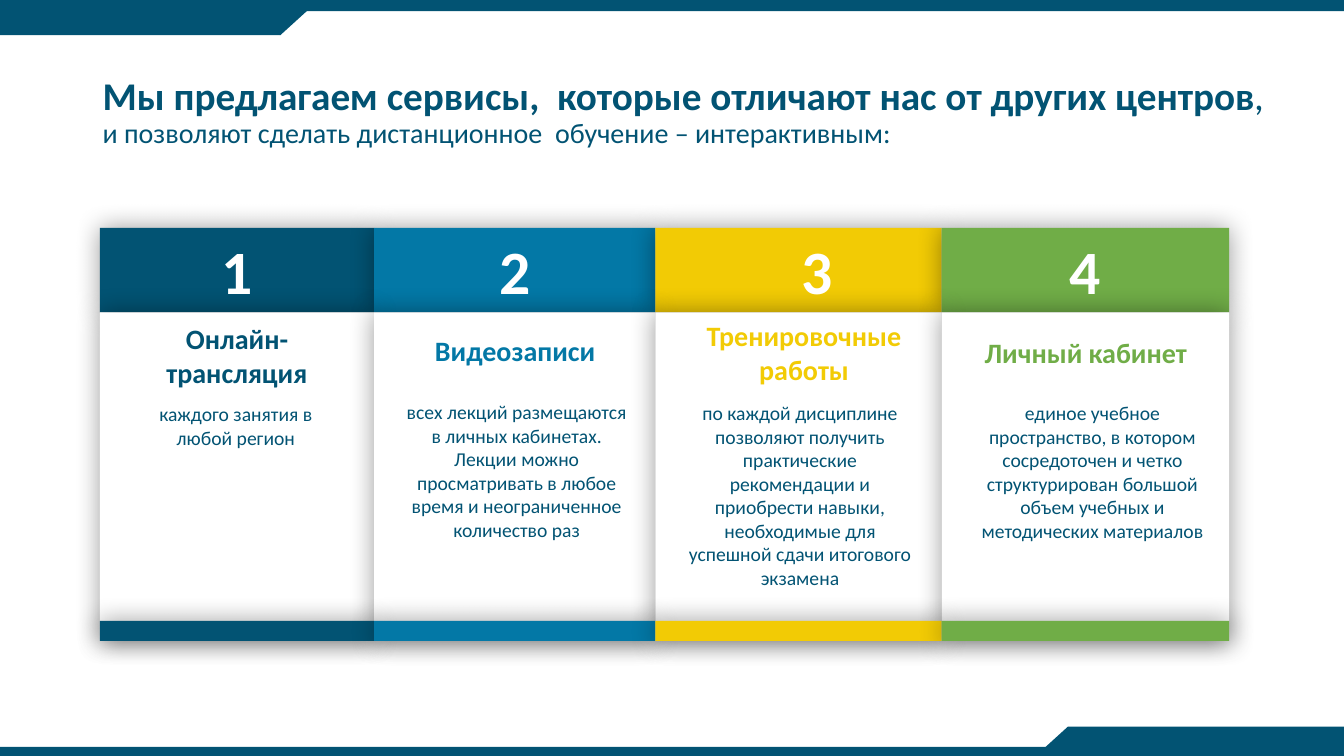
import pptx
import pptx.util
import pptx.oxml
import pptx.oxml.ns
import pptx.dml.color
import pptx.enum.shapes
import pptx.enum.text
from collections import namedtuple

Inches = pptx.util.Inches
Shape = pptx.enum.shapes.MSO_SHAPE
Align = pptx.enum.text.PP_ALIGN
Anchor = pptx.enum.text.MSO_ANCHOR

WIDTH, HEIGHT = 13.33, 7.5
NAVY, WHITE = "025373", "FFFFFF"
SHADOW = (
    '<a:effectLst %s><a:outerShdw blurRad="241300" dist="0" dir="0" algn="ctr" rotWithShape="0">'
    '<a:srgbClr val="000000"><a:alpha val="40000"/></a:srgbClr></a:outerShdw></a:effectLst>'
    % pptx.oxml.ns.nsdecls("a")
)

# mid: centre of the number; head and body: left, top, width of the text
Card = namedtuple("Card", "left width color mid title head text body")
CARDS = [
    Card(0.99, 2.72, NAVY, 2.35, "Онлайн-трансляция", (1.29, 3.14, 2.12),
         "каждого занятия в любой регион", (1.28, 3.94, 2.12)),
    Card(3.71, 2.79, "0378A6", 5.11, "Видеозаписи", (4.05, 3.26, 2.12),
         "всех лекций размещаются в личных кабинетах. Лекции можно просматривать "
         "в любое время и неограниченное количество раз", (3.92, 3.92, 2.41)),
    Card(6.5, 2.84, "F2CB05", 8.1, "Тренировочные работы", (6.84, 3.11, 2.27),
         "по каждой дисциплине позволяют получить практические рекомендации и приобрести "
         "навыки, необходимые для успешной сдачи итогового экзамена", (6.71, 3.93, 2.45)),
    Card(9.34, 2.85, "70AD47", 10.76, "Личный кабинет", (9.59, 3.28, 2.36),
         "единое учебное пространство, в котором сосредоточен и четко структурирован "
         "большой объем учебных и методических материалов", (9.59, 3.93, 2.49)),
]


def rgb(color):
    return pptx.dml.color.RGBColor.from_string(color)


def block(slide, box, color, kind=Shape.RECTANGLE, shade=False):
    shape = slide.shapes.add_shape(kind, *map(Inches, box))
    shape.fill.solid()
    shape.fill.fore_color.rgb = rgb(color)
    shape.line.fill.background()
    if shade:
        shape._element.spPr.append(pptx.oxml.parse_xml(SHADOW))
    else:
        shape.shadow.inherit = False
    return shape


def style(font, size, color, bold=False):
    font.name = "Calibri"
    font.size = pptx.util.Pt(size)
    font.color.rgb = rgb(color)
    font.bold = bold


def label(slide, box, text, size, color, bold=False):
    frame = slide.shapes.add_textbox(*map(Inches, box)).text_frame
    frame.word_wrap = True
    para = frame.paragraphs[0]
    para.text = text
    para.alignment = Align.CENTER
    style(para.font, size, color, bold)


def frame_bars(slide):
    """Bars along the top and bottom edges, each with a slanted tab."""
    for top in (0, HEIGHT - 0.09):
        block(slide, (0, top, WIDTH, 0.11), NAVY)
    for left, top, slant, turn in ((0, 0.05, 2.45, 0), (10.59, 7.21, 10.26, 180)):
        block(slide, (left, top, 2.78, 0.3), NAVY)
        tip = block(slide, (slant, top, 0.66, 0.3), NAVY, Shape.FLOWCHART_MERGE)
        tip.rotation = turn


def heading(slide, box):
    frame = slide.shapes.add_textbox(*map(Inches, box)).text_frame
    frame.word_wrap = True
    frame.vertical_anchor = Anchor.MIDDLE
    first, second = frame.paragraphs[0], frame.add_paragraph()
    lead = "Мы предлагаем сервисы,  которые отличают нас от других центров"
    for text, bold in ((lead, True), (",", False)):
        run = first.add_run()
        run.text = text
        style(run.font, 28, NAVY, bold)
    second.text = "и позволяют сделать дистанционное  обучение – интерактивным:"
    style(second.font, 20, NAVY)
    for para in (first, second):
        para.line_spacing = 0.9


def cards(slide, top, height):
    """Header, panel and footer layers, then the text of every card."""
    head, foot = 0.84, 0.2
    layers = (
        (top, head, None),
        (top + head, height - head, WHITE),
        (top + height - foot, foot, None),
    )
    for y, tall, fill in layers:
        for card in CARDS:
            block(slide, (card.left, y, card.width, tall), fill or card.color, shade=True)
    for number, card in enumerate(CARDS, 1):
        label(slide, (card.mid - 0.26, top, 0.52, head), str(number), 44, WHITE, True)
        tall = 0.77 if number % 2 else 0.44
        label(slide, (*card.head, tall), card.title, 20, card.color, True)
        label(slide, (*card.body, 1.51), card.text, 14, NAVY)


def main():
    deck = pptx.Presentation()
    deck.slide_width, deck.slide_height = Inches(WIDTH), Inches(HEIGHT)
    slide = deck.slides.add_slide(deck.slide_layouts[6])
    frame_bars(slide)
    heading(slide, (0.92, 0.4, 12, 1.45))
    cards(slide, 2.26, 4.1)
    deck.save("out.pptx")


if __name__ == "__main__":
    main()
